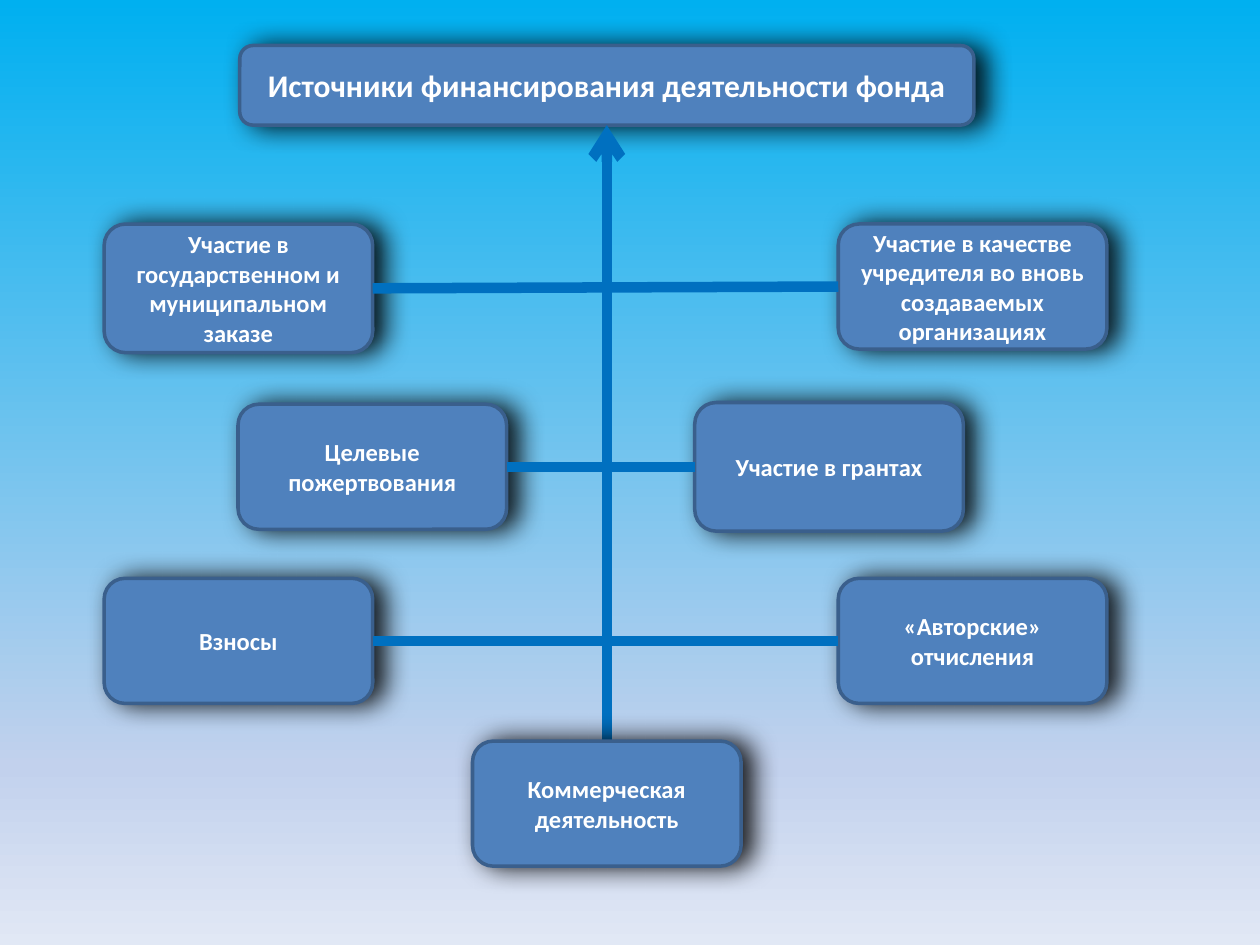
from copy import deepcopy

from lxml.etree import SubElement
from pptx import Presentation
from pptx.dml.color import RGBColor
from pptx.enum.shapes import MSO_CONNECTOR, MSO_SHAPE
from pptx.enum.text import MSO_ANCHOR, PP_ALIGN
from pptx.oxml.ns import qn
from pptx.util import Pt

WHITE = RGBColor(0xFF, 0xFF, 0xFF)
BLUE = RGBColor(0x4F, 0x81, 0xBD)
EDGE = RGBColor(0x3A, 0x5F, 0x8C)
LINK = RGBColor(0x00, 0x70, 0xC0)
SKY = [(0, RGBColor(0x00, 0xB0, 0xF0)),
       (0.81, RGBColor(0xC2, 0xD1, 0xED)),
       (1, RGBColor(0xE1, 0xE8, 0xF5))]

WIDE, LOW, TALL = 153.5, 71.5, 73.5  # source box: width, two heights
TOP, LEFT, BOTTOM, RIGHT = range(4)  # connection sites of a box

# Pairs of sources: (text, left, top, height) on each side of the trunk
PAIRS = [
    (("Участие в государственном и муниципальном заказе", 59.5, 128, TALL),
     ("Участие в качестве учредителя во вновь создаваемых организациях",
      479, 128, LOW)),
    (("Целевые пожертвования", 136, 231, LOW),
     ("Участие в грантах", 397, 230, TALL)),
    (("Взносы", 59.5, 330.5, LOW),
     ("«Авторские» отчисления", 479, 330.5, LOW)),
]


def paint_sky(slide):
    """Vertical three-colour background."""
    fill = slide.background.fill
    fill.gradient()
    fill.gradient_angle = 270
    stops = slide.element.find(".//" + qn("a:gsLst"))
    stops.append(deepcopy(stops[0]))
    for stop, (place, color) in zip(fill.gradient_stops, SKY):
        stop.position = place
        stop.color.rgb = color


def add_shade(shape):
    """Soft dark shadow to the right."""
    shape.shadow.inherit = False
    effects = shape.element.spPr.find(qn("a:effectLst"))
    shade = SubElement(effects, qn("a:outerShdw"), blurRad=str(Pt(15)),
                       dist=str(Pt(6)), dir="0", algn="l", rotWithShape="0")
    black = SubElement(shade, qn("a:srgbClr"), val="000000")
    SubElement(black, qn("a:alpha"), val="89000")


def add_box(slide, text, left, top, height, width=WIDE, size=14):
    box = slide.shapes.add_shape(MSO_SHAPE.ROUNDED_RECTANGLE, Pt(left),
                                 Pt(top), Pt(width), Pt(height))
    box.fill.solid()
    box.fill.fore_color.rgb = BLUE
    box.line.color.rgb = EDGE
    box.line.width = Pt(2)
    add_shade(box)
    frame = box.text_frame
    frame.text = text
    frame.word_wrap = True
    frame.vertical_anchor = MSO_ANCHOR.MIDDLE
    line = frame.paragraphs[0]
    line.alignment = PP_ALIGN.CENTER
    font = line.runs[0].font
    font.name, font.size, font.bold = "Calibri", Pt(size), True
    font.color.rgb = WHITE
    return box


def add_link(slide):
    link = slide.shapes.add_connector(MSO_CONNECTOR.STRAIGHT, 0, 0, 0, 0)
    link.line.color.rgb = LINK
    link.line.width = Pt(6)
    SubElement(link.element.spPr, qn("a:effectLst"))
    return link


def join(link, start, site, end, goal):
    link.begin_connect(start, site)
    link.end_connect(end, goal)


def add_tree(slide, left, top):
    """Heading, paired sources and the trunk that leads up to the heading."""
    head = add_box(slide, "Источники финансирования деятельности фонда",
                   left + 137, top + 26, 45.5, 419.5, 18)

    # Sources on both sides
    rows = [[add_box(slide, text, left + x, top + y, height)
             for text, x, y, height in pair] for pair in PAIRS]

    # Branches
    for first, second in rows:
        join(add_link(slide), first, RIGHT, second, LEFT)

    # Trunk with arrowhead, behind the base box
    trunk = add_link(slide)
    SubElement(trunk.line._get_or_add_ln(), qn("a:tailEnd"), type="arrow")
    base = add_box(slide, "Коммерческая деятельность",
                   left + 270, top + 423.5, LOW)
    join(trunk, base, TOP, head, BOTTOM)


def main():
    deck = Presentation()
    deck.slide_width, deck.slide_height = Pt(720), Pt(540)
    slide = deck.slides.add_slide(deck.slide_layouts[6])
    paint_sky(slide)
    add_tree(slide, 0, 0)
    deck.save("out.pptx")


if __name__ == "__main__":
    main()
